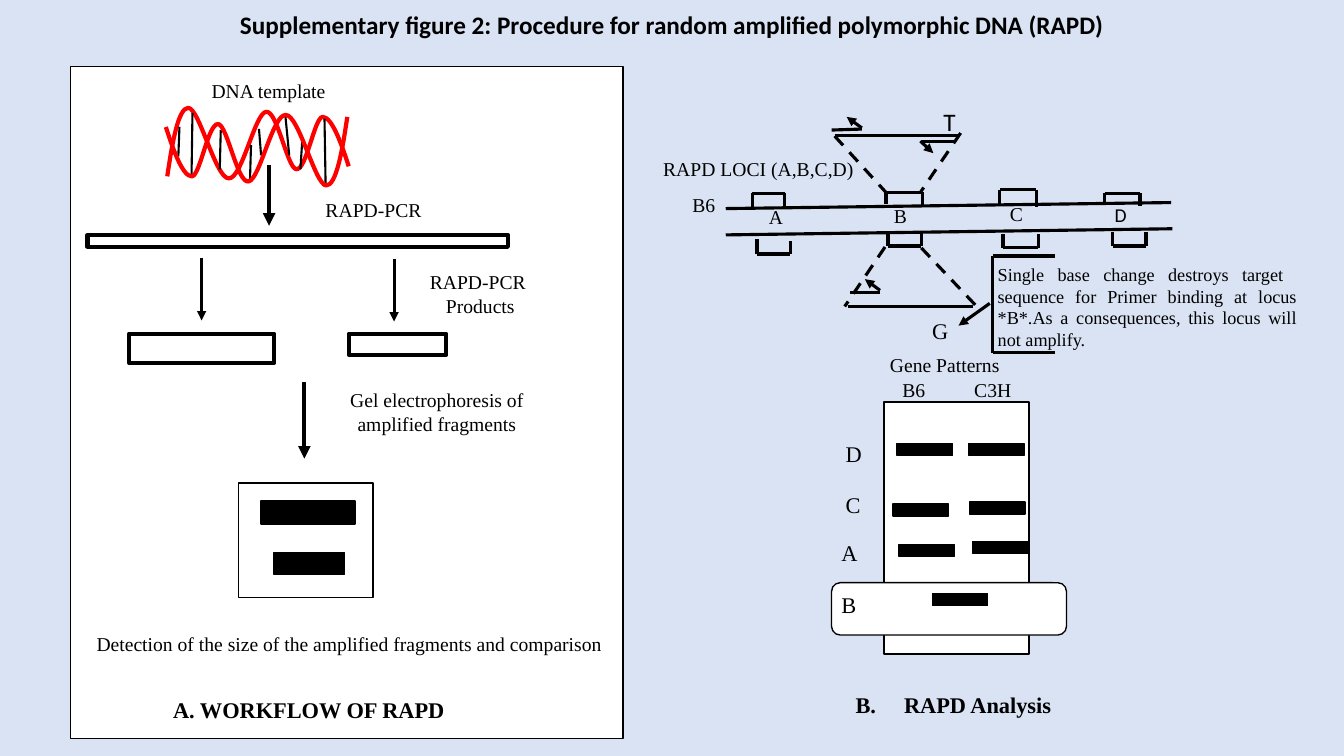
import pptx
import pptx.util
import pptx.dml.color
import pptx.enum.dml
import pptx.enum.shapes
import pptx.enum.text
import pptx.oxml.ns
import lxml.etree

Pt = pptx.util.Pt
Shape = pptx.enum.shapes.MSO_SHAPE
Align = pptx.enum.text.PP_ALIGN
SERIF, SANS = "Times New Roman", "Calibri"
BLACK, WHITE, RED, SKY = "000000", "FFFFFF", "FF0000", "DAE3F3"

# Boxes of the regions: left, top, width, height in points
TITLE = (0, 2.9, 960, 28.8)
FLOW = (50.4, 47.5, 394.6, 480.2)
LOCI = (460, 72, 480, 190)
GEL = (594, 248.4, 208, 268)


def color(code):
    return pptx.dml.color.RGBColor.from_string(code)


def add_sub(node, tag, **attrs):
    return lxml.etree.SubElement(node, pptx.oxml.ns.qn(tag), attrs)


def add_run(para, text, size, font=SERIF, bold=False):
    run = para.add_run()
    run.text = text
    run.font.size, run.font.name, run.font.bold = Pt(size), font, bold
    run.font.color.rgb = color(BLACK)


def label(slide, box, x, y, wide, text, size=14, font=SERIF, bold=False,
          align=Align.LEFT, high=24):
    area = slide.shapes.add_textbox(Pt(box[0] + x), Pt(box[1] + y), Pt(wide), Pt(high))
    area.text_frame.word_wrap = True
    para = area.text_frame.paragraphs[0]
    para.alignment = align
    add_run(para, text, size, font, bold)
    return para


def hang(para, first, rest):
    """Start the text at first; a tab leads on to rest."""
    props = para._p.get_or_add_pPr()
    props.set("marL", str(Pt(rest)))
    props.set("indent", str(Pt(first) - Pt(rest)))


def block(slide, box, x, y, wide, high, fill=WHITE, width=1, kind=Shape.RECTANGLE):
    shape = slide.shapes.add_shape(kind, Pt(box[0] + x), Pt(box[1] + y), Pt(wide), Pt(high))
    shape.shadow.inherit = False
    shape.fill.solid()
    shape.fill.fore_color.rgb = color(fill)
    shape.line.color.rgb = color(BLACK)
    shape.line.width = Pt(width)


def line(slide, box, x1, y1, x2, y2, width=2.25, dash=False, arrow=False):
    link = slide.shapes.add_connector(
        pptx.enum.shapes.MSO_CONNECTOR.STRAIGHT,
        Pt(box[0] + x1), Pt(box[1] + y1), Pt(box[0] + x2), Pt(box[1] + y2))
    link.line.color.rgb = color(BLACK)
    link.line.width = Pt(width)
    if dash:
        link.line.dash_style = pptx.enum.dml.MSO_LINE.DASH
    if arrow:
        add_sub(link.line._get_or_add_ln(), "a:tailEnd", type="triangle")
    add_sub(link._element.spPr, "a:effectLst")


def strand(slide, left, top, turn):
    """Draw one strand of the helix; turn rotates it by half a circle."""
    dots = [(0, 49), (3.6, 24.5), (7.9, 0), (15.1, 0),
            (23, 0.7), (34.6, 50.4), (43.9, 50.4),
            (53.3, 51.1), (62.6, 3.6), (70.6, 2.9),
            (78.5, 1.4), (85.7, 43.2), (92.2, 43.9),
            (99.4, 44.6), (105.1, 7.2), (110.9, 6.5),
            (117.4, 6.5), (123.8, 23.8), (129.6, 41.8)]
    if turn:
        dots = [(130 - x, 50.4 - y) for x, y in dots]
    dots = [(Pt(left + x), Pt(top + y)) for x, y in dots]
    form = slide.shapes.build_freeform(*dots[0])
    form.add_line_segments(dots[1:], close=False)
    shape = form.convert_to_shape()
    # Join every three points into one curve
    legs = list(shape._element.iter(pptx.oxml.ns.qn("a:lnTo")))
    for start in range(0, len(legs), 3):
        curve = add_sub(legs[start].getparent(), "a:cubicBezTo")
        for leg in legs[start:start + 3]:
            curve.append(leg[0])
            leg.getparent().remove(leg)
    shape.shadow.inherit = False
    shape.fill.background()
    shape.line.color.rgb = color(RED)
    shape.line.width = Pt(3)


def draw_title(slide, box):
    title = slide.shapes.title
    title.left, title.top, title.width, title.height = [Pt(n) for n in box]
    title.text_frame.vertical_anchor = pptx.enum.text.MSO_ANCHOR.TOP
    para = title.text_frame.paragraphs[0]
    para.alignment = Align.CENTER
    add_run(para, "Supplementary figure 2: Procedure for random amplified "
            "polymorphic DNA (RAPD)", 18, SANS, True)


def draw_flow(slide, box):
    block(slide, box, 0, 0, box[2], box[3])
    # DNA helix
    strand(slide, box[0] + 69.1, box[1] + 29.5, False)
    for rung in [(77.8, 43.2, 77, 64.1), (87.1, 33.1, 86.4, 78.5),
                 (107.3, 45.4, 106.6, 73.4), (128.9, 56.2, 128.2, 80.6),
                 (134.6, 44.6, 136.1, 63.4), (153.4, 34.6, 156.2, 63.4),
                 (165.6, 51.1, 164.2, 73.4), (181.4, 37.4, 182.2, 85)]:
        line(slide, box, *rung, width=1.5)
    strand(slide, box[0] + 67.7, box[1] + 34.6, True)
    # Steps between the stages
    for x, start, end, width in [(141.8, 70.6, 113.8, 3), (93.6, 136.8, 181.4, 2.25),
                                 (231.1, 137.5, 182.2, 2.25), (167, 225.4, 280.1, 3)]:
        line(slide, box, x, start, x, end, width, arrow=True)
    # Template, products and gel
    for part in [(12.2, 120.2, 300.2, 8.6), (41.8, 190.8, 103.7, 20.9),
                 (198.7, 190.8, 69.8, 15.1)]:
        block(slide, box, *part, width=3)
    block(slide, box, 120.2, 297.4, 95.8, 82.1)
    block(slide, box, 136.1, 310.3, 67, 16.6, BLACK)
    block(slide, box, 145.4, 347, 50.4, 15.8, BLACK)
    # Labels
    label(slide, box, 93.6, 5, 137.5, "DNA template")
    label(slide, box, 175, 90, 157, "RAPD-PCR")
    label(slide, box, 241.2, 141.8, 103, "RAPD-PCR  Products", align=Align.CENTER, high=41)
    label(slide, box, 187.9, 226.1, 147.6, "Gel electrophoresis of amplified fragments",
          align=Align.CENTER, high=41)
    label(slide, box, 11.5, 400.3, 383.8,
          "Detection of the size of the amplified fragments and comparison")
    label(slide, box, 66.2, 446.4, 275, "A. WORKFLOW OF RAPD", 16, bold=True)


def draw_loci(slide, box):
    # Two DNA strands
    line(slide, box, 58.4, 77, 376.6, 72.7)
    line(slide, box, 58.4, 95.8, 377.4, 91.4)
    # Brackets above and below: left, right, bar, ends of the legs
    for left, right, bar, end1, end2 in [
            (77.4, 100.4, 66.2, 77, 75.6), (172.9, 198.8, 65.5, 74, 74.9),
            (254.2, 280.2, 63.4, 73.4, 75.6), (329.1, 354.3, 66.2, 73.4, 74.9),
            (80.7, 104.5, 109.4, 98.6, 100.1), (174.3, 198.1, 103.7, 93.6, 94.3),
            (256.4, 281.6, 105.1, 95, 95), (334.9, 358.6, 103.7, 93.6, 93.6)]:
        line(slide, box, left, bar, right, bar)
        line(slide, box, left, bar, left, end1)
        line(slide, box, right, bar, right, end2)
    # Primer sites at locus B
    for site in [(136.2, 24.5, 225.4, 24.5), (134, 20.9, 155.6, 20.2),
                 (198.8, 28.8, 221.1, 28.8), (145.5, 146.9, 234.8, 146.9),
                 (147, 136.8, 168.6, 136.8)]:
        line(slide, box, *site)
    for zoom in [(226.2, 23, 197.4, 65.5), (136.2, 25.2, 174.3, 67),
                 (198.1, 105.1, 237, 146.2), (172.2, 104.4, 143.4, 146.9)]:
        line(slide, box, *zoom, dash=True)
    for tip in [(155.6, 19.4, 144.8, 11.5), (197.4, 28.8, 206.7, 37.4),
                (168.6, 135.4, 157.8, 127.4), (247, 144.7, 224.7, 160.6)]:
        line(slide, box, *tip, arrow=True)
    # Note with its bracket
    line(slide, box, 249.2, 110.9, 249.2, 180)
    for y in (110.9, 180):
        line(slide, box, 249.2, y, 293.8, y)
    label(slide, box, 245.6, 112.3, 227.5,
          "Single base change destroys target  sequence for Primer binding at locus "
          "*B*.As a consequences, this locus will not amplify.",
          13, align=Align.JUSTIFY, high=70.6)
    # Labels
    for x, y, wide, text, size, font in [
            (6.6, 36.7, 162, "RAPD LOCI (A,B,C,D)", 14, SERIF),
            (27.4, 61.9, 51.8, "B6", 14, SERIF), (82.2, 70.6, 28.8, "A", 14, SERIF),
            (171.4, 69.8, 46.8, "B", 14, SERIF), (254.2, 68.4, 36.7, "C", 14, SERIF),
            (329.1, 69.1, 44.6, "D", 14, SANS), (206.7, 0.7, 46.1, "T", 18, SANS),
            (198.8, 151.2, 59, "G", 16, SERIF)]:
        label(slide, box, x, y, wide, text, size, font)


def draw_gel(slide, box):
    label(slide, box, 34.6, 0, 207.4, "Gene Patterns")
    hang(label(slide, box, 15.8, 18, 227.5, "B6\tC3H"), 27.7, 79)
    # Gel, frame of locus B and bands
    block(slide, box, 37.4, 38.9, 103.7, 180)
    block(slide, box, 0, 167.8, 167.8, 37.4, kind=Shape.ROUNDED_RECTANGLE)
    for x, y in [(46.8, 68.4), (97.9, 68.4), (43.9, 111.6), (98.6, 110.2),
                 (48.2, 140.4), (100.8, 138.2), (72, 175.7)]:
        block(slide, box, x, y, 39.6, 8.6, BLACK)
    # Locus names
    for x, y, wide, text in [(2.9, 62.6, 55.4, "D"), (2.9, 98.6, 42.5, "C"),
                             (0, 133.2, 36, "A"), (0, 170.6, 48.2, "B")]:
        label(slide, box, x, y, wide, text, 16)
    # Caption
    hang(label(slide, box, 10.1, 241.9, 203.8, "B.\tRAPD Analysis", 16, bold=True), 0, 34.6)


def main():
    deck = pptx.Presentation()
    deck.slide_width, deck.slide_height = Pt(960), Pt(540)
    slide = deck.slides.add_slide(deck.slide_layouts[5])
    slide.background.fill.solid()
    slide.background.fill.fore_color.rgb = color(SKY)
    draw_flow(slide, FLOW)
    draw_loci(slide, LOCI)
    draw_gel(slide, GEL)
    draw_title(slide, TITLE)
    deck.save("out.pptx")


if __name__ == "__main__":
    main()
